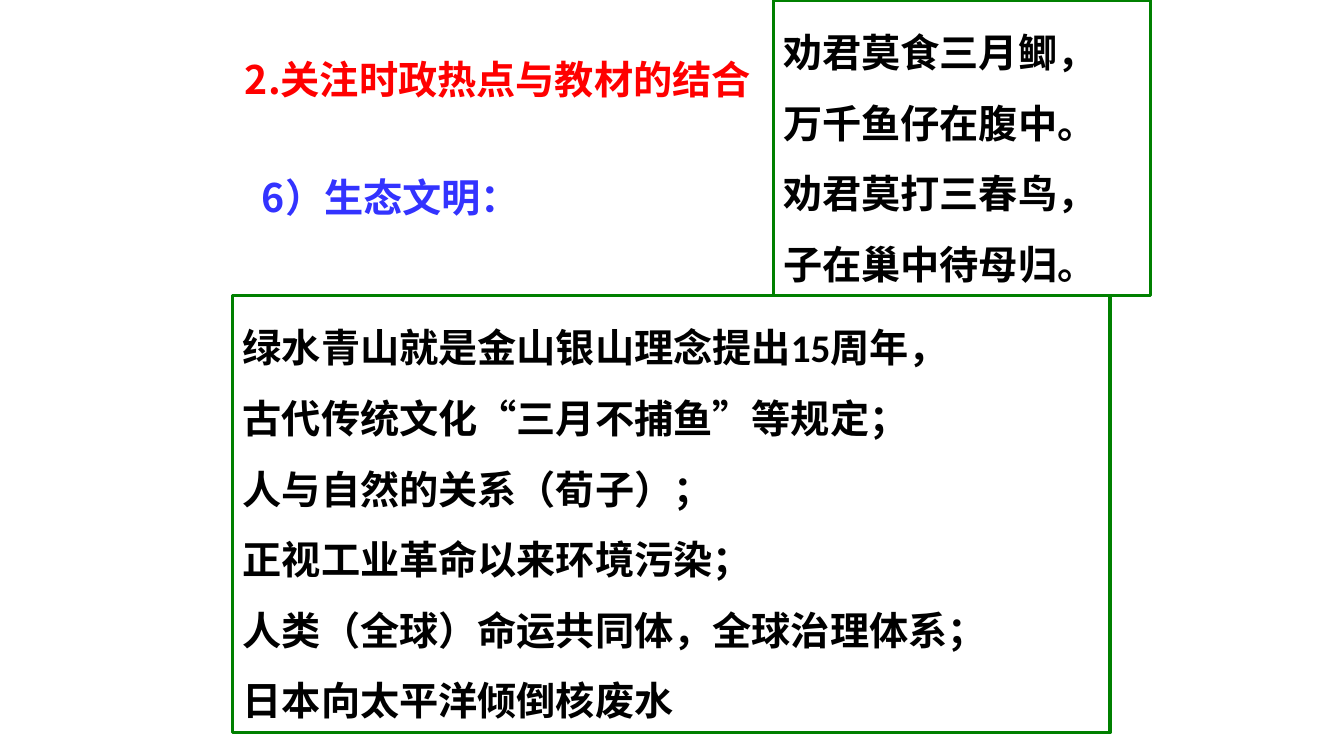
from lxml import etree
from pptx import Presentation
from pptx.dml.color import RGBColor
from pptx.enum import shapes, text
from pptx.oxml.ns import qn
from pptx.util import Inches, Pt

CJK_FONT = "Noto Sans CJK SC"


def write_lines(frame, lines, color, latin_font=CJK_FONT, listed=False):
    """Fill a frame with bold lines; listed lines are spaced and hang-indented."""
    frame.word_wrap = True
    frame.auto_size = text.MSO_AUTO_SIZE.SHAPE_TO_FIT_TEXT
    frame.vertical_anchor = text.MSO_ANCHOR.TOP
    for index, line in enumerate(lines):
        paragraph = frame.add_paragraph() if index else frame.paragraphs[0]
        paragraph.alignment = text.PP_ALIGN.LEFT
        if listed:
            paragraph.line_spacing = 1.5
            properties = paragraph._p.get_or_add_pPr()
            properties.set("marL", str(Inches(0.38)))
            properties.set("indent", str(Inches(-0.38)))
        run = paragraph.add_run()
        run.text = line
        run.font.name = latin_font
        run.font.size = Pt(28)
        run.font.bold = True
        run.font.color.rgb = RGBColor.from_string(color)
        east_asian = etree.SubElement(run._r.get_or_add_rPr(), qn("a:ea"))
        east_asian.set("typeface", CJK_FONT)


deck = Presentation()
deck.slide_width, deck.slide_height = Inches(13.33), Inches(7.5)
slide = deck.slides.add_slide(deck.slide_layouts[5])

heading = slide.shapes.title
heading.left, heading.top = Inches(2.33), Inches(0.5)
heading.width, heading.height = Inches(5.22), Inches(0.57)
write_lines(heading.text_frame, ["2.关注时政热点与教材的结合"], "FF0000")

topic = slide.shapes.add_textbox(Inches(2.5), Inches(1.67), Inches(2.77), Inches(0.57))
write_lines(topic.text_frame, ["6）生态文明："], "3333FF")

poem = ["劝君莫食三月鲫，", "万千鱼仔在腹中。", "劝君莫打三春鸟，", "子在巢中待母归。"]
key_points = [
    "绿水青山就是金山银山理念提出15周年，",
    "古代传统文化“三月不捕鱼”等规定；",
    "人与自然的关系（荀子）；",
    "正视工业革命以来环境污染；",
    "人类（全球）命运共同体，全球治理体系；",
    "日本向太平洋倾倒核废水",
]
panels = [
    ((7.67, 0, 3.74, 2.93), poem, CJK_FONT),
    ((2.31, 2.93, 8.7, 4.34), key_points, "Calibri"),
]
for bounds, lines, latin_font in panels:
    panel = slide.shapes.add_shape(
        shapes.MSO_SHAPE.RECTANGLE, *[Inches(length) for length in bounds])
    panel.shadow.inherit = False
    panel.fill.background()
    panel.line.color.rgb = RGBColor.from_string("008000")
    panel.line.width = Pt(2.25)
    write_lines(panel.text_frame, lines, "000000", latin_font, listed=True)

deck.save("out.pptx")
